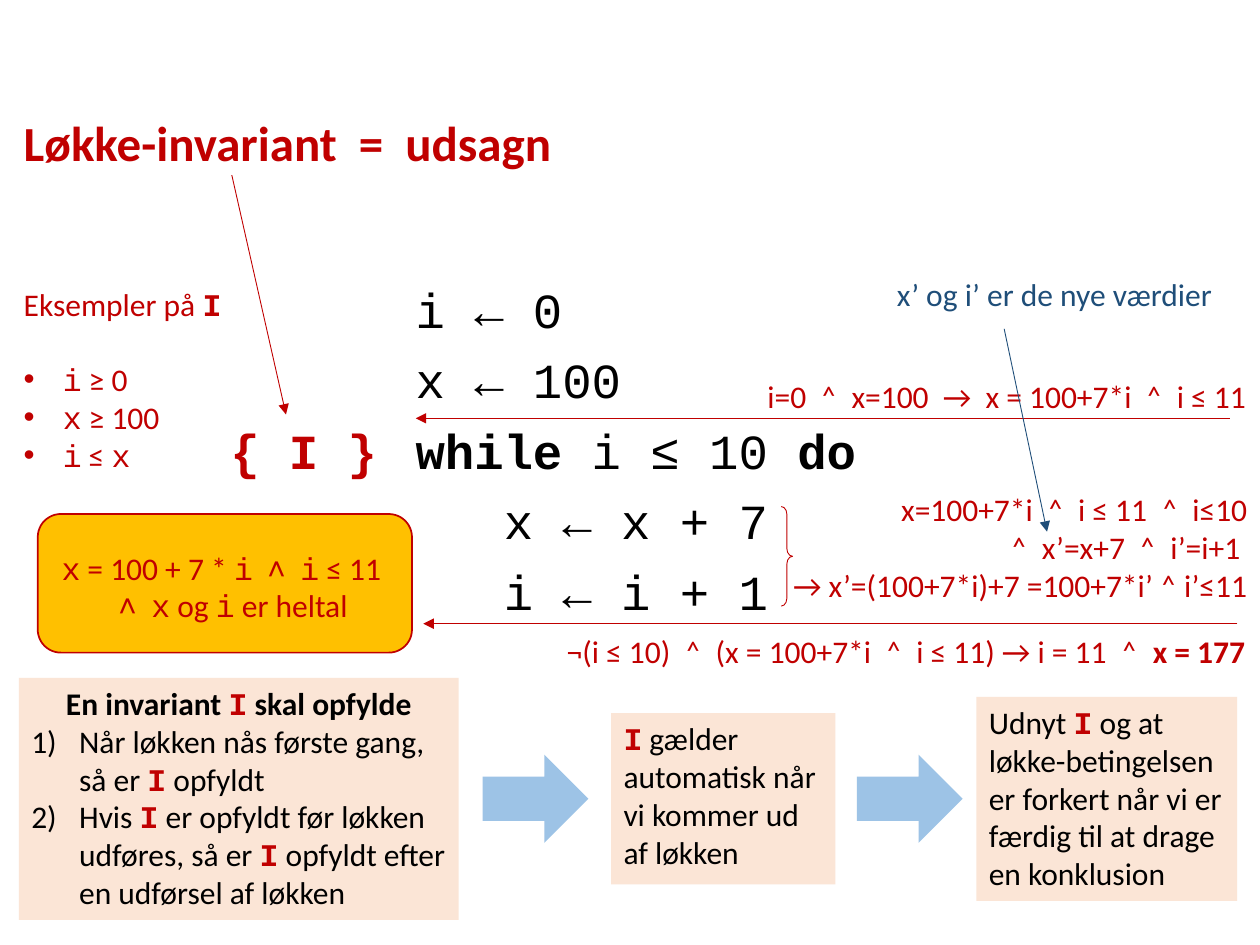
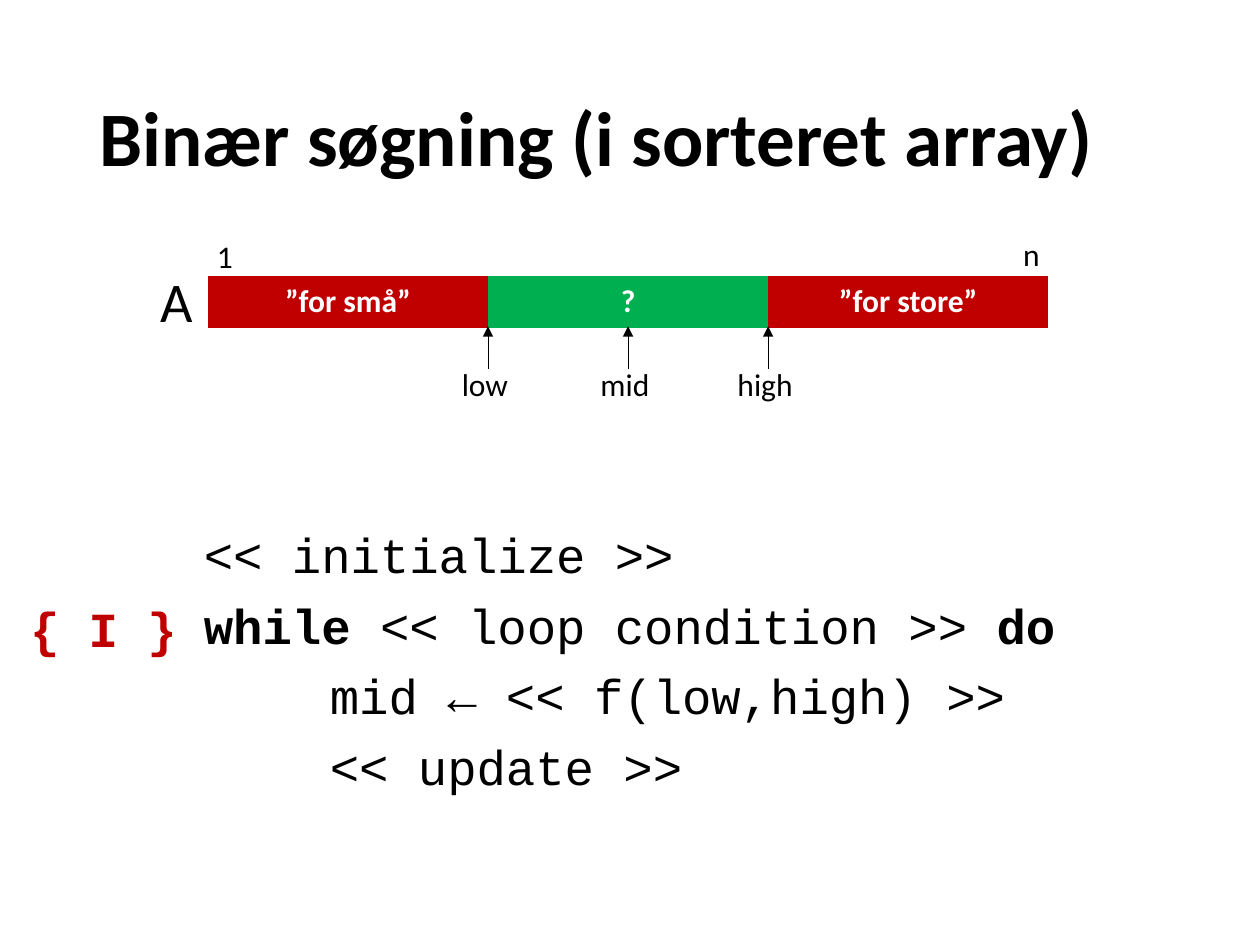
"""Builds two slides on loop invariants and binary search."""
from dataclasses import dataclass, replace
from typing import NamedTuple, Optional

from pptx import Presentation
from pptx import util as u
from pptx.dml.color import RGBColor
from pptx.enum import shapes, text
from pptx.oxml.ns import qn
from lxml import etree

C = {"ink": "000000", "red": "C00000", "gold": "FFC000", "peach": "FBE5D6",
     "sky": "9DC3E6", "navy": "1F4E79", "green": "00B050", "white": "FFFFFF"}
WIDTH, HEIGHT = u.Inches(10), u.Inches(7.5)
COLS, ROWS = 100, 75
LEFT, CENTER, RIGHT = text.PP_ALIGN.LEFT, text.PP_ALIGN.CENTER, text.PP_ALIGN.RIGHT
SHAPE = shapes.MSO_SHAPE


@dataclass(frozen=True)
class Style:
    size: float = 18
    font: str = "Calibri"
    color: str = "ink"
    bold: bool = False


class Span(NamedTuple):
    text: str
    style: Style


@dataclass(frozen=True)
class Para:
    spans: tuple
    align: int = LEFT
    indent: float = 0
    hang: float = 0
    bullet: Optional[str] = None
    before: float = 0
    spacing: Optional[float] = None


class Box(NamedTuple):
    x: float
    y: float
    w: float
    h: float


class Arrow(NamedTuple):
    x1: float
    y1: float
    x2: float
    y2: float
    color: str


PLAIN = Style()
BOLD = replace(PLAIN, bold=True)
RED = replace(PLAIN, color="red")
RED_BOLD = replace(RED, bold=True)
RED_CODE = replace(RED, font="Courier New")
INV = replace(RED_CODE, bold=True)
NAVY = replace(PLAIN, color="navy")
CODE = Style(28, "Courier New")
KEYWORD = replace(CODE, bold=True)
BRACES = replace(KEYWORD, color="red")
HEADING = replace(RED_BOLD, size=28)
TITLE = replace(BOLD, size=44)
ARRAY_NAME = replace(PLAIN, size=32)
CELL = replace(BOLD, color="white")


def col(n: float) -> int:
    """Width of n grid columns."""
    return round(WIDTH * n / COLS)


def row(n: float) -> int:
    """Height of n grid rows."""
    return round(HEIGHT * n / ROWS)


def place(box: Box) -> tuple:
    """Grid box as left, top, width and height."""
    return col(box.x), row(box.y), col(box.w), row(box.h)


def rgb(name: str) -> RGBColor:
    """Palette colour by name."""
    return RGBColor.from_string(C[name])


def para(*parts, **options) -> Para:
    """Paragraph from alternating texts and styles."""
    return Para(tuple(map(Span, parts[::2], parts[1::2])), **options)


def code(*parts, indent: float = 0) -> Para:
    """One line of program text."""
    return para(*parts, indent=indent, before=10, spacing=0.9)


def add_bullet(p, kind: str) -> None:
    """Give a paragraph a round bullet or an automatic number."""
    ppr = p._p.get_or_add_pPr()
    if kind == "number":
        etree.SubElement(ppr, qn("a:buAutoNum"), type="arabicParenR")
    else:
        etree.SubElement(ppr, qn("a:buFont"), typeface="Arial")
        etree.SubElement(ppr, qn("a:buChar"), char=kind)


def write(tf, paras: list) -> None:
    """Fill a text frame with paragraphs."""
    for i, item in enumerate(paras):
        p = tf.add_paragraph() if i else tf.paragraphs[0]
        p.alignment = item.align
        p.space_before = u.Pt(item.before)
        if item.spacing:
            p.line_spacing = item.spacing
        if item.indent:
            ppr = p._p.get_or_add_pPr()
            ppr.set("marL", str(col(item.indent)))
            ppr.set("indent", str(-col(item.hang)))
        if item.bullet:
            add_bullet(p, item.bullet)
        for span in item.spans:
            for k, line in enumerate(span.text.split("\n")):
                if k:
                    p.add_line_break()
                r = p.add_run()
                r.text = line
                r.font.size, r.font.name = u.Pt(span.style.size), span.style.font
                r.font.bold = span.style.bold
                r.font.color.rgb = rgb(span.style.color)


def add_text(s, box: Box, *paras: Para, middle: bool = False) -> None:
    """Draw a wrapping text box."""
    tf = s.shapes.add_textbox(*place(box)).text_frame
    tf.word_wrap = True
    tf.vertical_anchor = text.MSO_ANCHOR.MIDDLE if middle else text.MSO_ANCHOR.TOP
    write(tf, list(paras))


def add_shape(s, kind, box: Box, fill: Optional[str] = None, line: Optional[str] = None,
              weight: float = 1, paras: tuple = ()):
    """Draw a preset shape, with text if given."""
    sp = s.shapes.add_shape(kind, *place(box))
    sp.shadow.inherit = False
    if fill:
        sp.fill.solid()
        sp.fill.fore_color.rgb = rgb(fill)
    else:
        sp.fill.background()
    if line:
        sp.line.color.rgb, sp.line.width = rgb(line), u.Pt(weight)
    else:
        sp.line.fill.background()
    if paras:
        sp.text_frame.word_wrap = True
        sp.text_frame.vertical_anchor = text.MSO_ANCHOR.TOP
        write(sp.text_frame, list(paras))
    return sp


def add_arrow(s, a: Arrow) -> None:
    """Draw a thin line with an arrowhead at its end."""
    cx = s.shapes.add_connector(shapes.MSO_CONNECTOR.STRAIGHT,
                                col(a.x1), row(a.y1), col(a.x2), row(a.y2))
    cx.line.color.rgb, cx.line.width = rgb(a.color), u.Pt(0.5)
    etree.SubElement(cx.line._get_or_add_ln(), qn("a:tailEnd"), type="triangle")
    etree.SubElement(cx._element.spPr, qn("a:effectLst"))


def add_invariant(s, x: float, y: float) -> None:
    """Draw the { I } mark beside a loop."""
    add_text(s, Box(x, y, 18.6, 5.7), para("{ I }", BRACES))


def invariant_slide(prs) -> None:
    """Loop invariant with program, proof steps and conclusion."""
    s = prs.slides.add_slide(prs.slide_layouts[6])
    add_shape(s, SHAPE.ROUNDED_RECTANGLE, Box(3, 40.8, 29.7, 11), "gold", "red")
    add_text(s, Box(59.8, 38.4, 40.2, 10.1), para(
        "x=100+7*i  ˄  i ≤ 11  ˄  i≤10\n˄  x’=x+7  ˄  i’=i+1 \n"
        "→ x’=(100+7*i)+7 =100+7*i’ ˄ i’≤11", RED, align=RIGHT))
    listed = dict(indent=3.1, hang=3.1, bullet="•")
    conjunction = ("˄", RED_CODE, "  ", RED)
    add_text(
        s, Box(0.9, 8.4, 47.6, 42.1),
        para("Løkke-invariant  =  udsagn", HEADING),
        para("Eksempler på ", RED, "I", INV, before=65),
        para("i", RED_CODE, " ≥ 0", RED, before=21.5, **listed),
        para("x", RED_CODE, " ≥ 100", RED, **listed),
        para("i", RED_CODE, " ≤ ", RED, "x", RED_CODE, **listed),
        para("x", RED_CODE, " = 100 + 7 * ", RED, "i", RED_CODE, "  ", RED, *conjunction,
             "i", RED_CODE, " ≤ 11", RED, indent=3, before=43),
        para(*conjunction, "x", RED_CODE, " og ", RED, "i", RED_CODE, " er heltal", RED,
             indent=7.5))
    add_text(
        s, Box(32, 22.2, 50.9, 29.8),
        code("i ← 0", CODE), code("x ← 100", CODE),
        code("while", KEYWORD, " i ≤ 10 ", CODE, "do", KEYWORD),
        code("x ← x + 7", CODE, indent=7), code("i ← i + 1", CODE, indent=7))
    add_invariant(s, 17.3, 32.9)

    step = dict(indent=3.8, hang=3.8, bullet="number")
    panels = {
        Box(1.5, 53.8, 34.9, 19.2): (
            para("En invariant ", BOLD, "I", INV, " skal opfylde", BOLD, align=CENTER),
            para("Når løkken nås første gang, så er ", PLAIN, "I", INV,
                 " opfyldt", PLAIN, **step),
            para("Hvis ", PLAIN, "I", INV, " er opfyldt før løkken udføres, så er ", PLAIN,
                 "I", INV, " opfyldt efter en udførsel af løkken", PLAIN, **step)),
        Box(48.5, 56.6, 17.8, 13.6): (
            para("I", INV, " gælder automatisk når vi kommer ud af løkken", PLAIN),),
        Box(77.5, 55.3, 20.7, 16.2): (
            para("Udnyt ", PLAIN, "I", INV, " og at løkke-betingelsen er forkert når vi er "
                 "færdig til at drage en konklusion", PLAIN),),
    }
    for box, paras in panels.items():
        add_shape(s, SHAPE.RECTANGLE, box, "peach", paras=paras)
    for x in (38.3, 68):
        add_shape(s, SHAPE.RIGHT_ARROW, Box(x, 59.9, 8.4, 7), "sky")

    add_text(s, Box(43.4, 29.4, 56.5, 4),
             para("i=0  ˄  x=100  →  x = 100+7*i  ˄  i ≤ 11", RED, align=RIGHT))
    add_text(s, Box(38.3, 49.7, 61.5, 4),
             para("¬(i ≤ 10)  ˄  (x = 100+7*i  ˄  i ≤ 11) → i = 11  ˄  ", RED,
                  "x = 177", RED_BOLD, align=RIGHT))
    brace = add_shape(s, SHAPE.RIGHT_BRACE, Box(62, 40.2, 0.9, 7.9), line="red", weight=0.5)
    brace.adjustments[0] = 0.685
    add_text(s, Box(68, 21.3, 31.4, 4),
             para("x’ og i’ er de nye værdier", NAVY, align=CENTER))
    for arrow in (Arrow(18.4, 13.9, 22.7, 32.9, "red"),
                  Arrow(97.6, 33.2, 33, 33.2, "red"),
                  Arrow(98.2, 49.5, 33.6, 49.5, "red"),
                  Arrow(79.7, 26.1, 83.1, 42.2, "navy")):
        add_arrow(s, arrow)


def add_array(s, box: Box, parts: dict) -> None:
    """Draw the array as a one-row table of equal parts."""
    table = s.shapes.add_table(1, len(parts), *place(box)).table
    table.first_row = table.horz_banding = False
    style = table._tbl.tblPr.find(qn("a:tableStyleId"))
    style.text = "{2D5ABB26-0587-4C30-8999-92F81FD0307C}"
    for cell, (label, fill) in zip(table.rows[0].cells, parts.items()):
        cell.fill.solid()
        cell.fill.fore_color.rgb = rgb(fill)
        write(cell.text_frame, [para(label, CELL, align=CENTER)])


def search_slide(prs) -> None:
    """Binary search with its array, pointers and program."""
    s = prs.slides.add_slide(prs.slide_layouts[6])
    add_text(s, Box(6.9, 4, 86.2, 14.5),
             para("Binær søgning (i sorteret array)", TITLE, spacing=0.9), middle=True)
    array = Box(16.5, 21.9, 66.7, 4.1)
    add_array(s, array, {"”for små”": "red", "?": "green", "”for store”": "red"})
    labels = [("1", 11.1, 18.3), ("n", 75.1, 18.2)]
    for sixth, name in enumerate(("low", "mid", "high"), start=2):
        x = array.x + array.w * sixth / 6
        add_arrow(s, Arrow(x, 29.3, x, 25.9, "ink"))
        labels.append((name, x - 7, 28.5))
    for name, x, y in labels:
        add_text(s, Box(x, y, 13.5, 4), para(name, PLAIN, align=CENTER))
    add_text(s, Box(5.3, 20.7, 11, 6.4), para("A", ARRAY_NAME, align=RIGHT))
    add_text(
        s, Box(15.2, 41.7, 72.6, 26.6),
        code("<< initialize >>", CODE),
        code("while", KEYWORD, " << loop condition >> ", CODE, "do", KEYWORD),
        code("mid ← << f(low,high) >>", CODE, indent=10),
        code("<< update >>", CODE, indent=10))
    add_invariant(s, 1.4, 47)


def main() -> None:
    """Build and save the deck."""
    prs = Presentation()
    prs.slide_width, prs.slide_height = WIDTH, HEIGHT
    invariant_slide(prs)
    search_slide(prs)
    prs.save("out.pptx")


if __name__ == "__main__":
    main()
